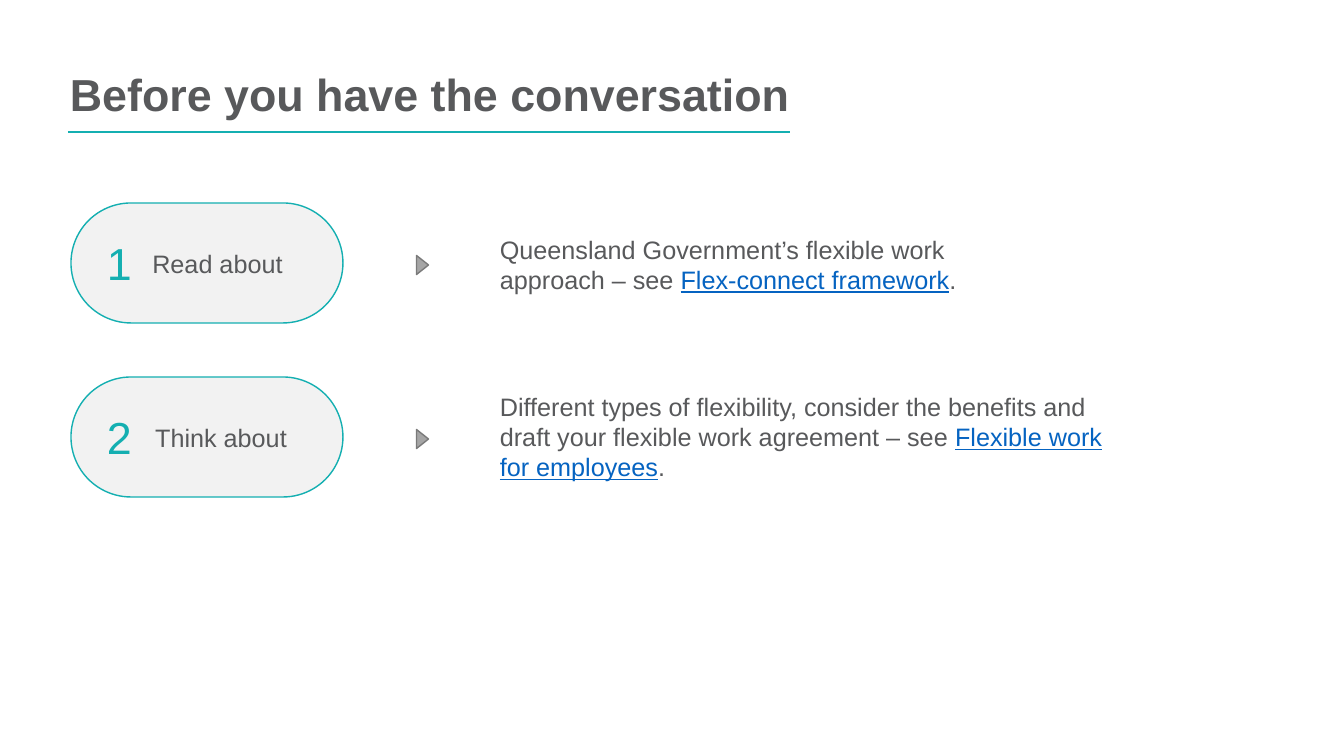
from pptx import Presentation
from pptx.dml.color import RGBColor
from pptx.enum.shapes import MSO_CONNECTOR, MSO_SHAPE
from pptx.enum.text import MSO_ANCHOR, PP_ALIGN
from pptx.oxml.ns import qn
from pptx.util import Emu, Pt
from lxml import etree

PILL, TRIANGLE = MSO_SHAPE.ROUNDED_RECTANGLE, MSO_SHAPE.ISOSCELES_TRIANGLE
STRAIGHT = MSO_CONNECTOR.STRAIGHT
MIDDLE, CENTER = MSO_ANCHOR.MIDDLE, PP_ALIGN.CENTER

GREY = RGBColor(0x58, 0x59, 0x5B)
TEAL = RGBColor(0x14, 0xAF, 0xB1)
BLUE = RGBColor(0x05, 0x63, 0xC1)
PALE = RGBColor(0xF2, 0xF2, 0xF2)
ARROW_FILL = RGBColor(0xA5, 0xA5, 0xA5)
ARROW_LINE = RGBColor(0x7A, 0x7A, 0x7A)


def px(*lengths):
    """Turn pixels, 100.8 to the inch, into EMU."""
    return [Emu(round(n * 914400 / 100.8)) for n in lengths]


def add_run(p, text, size, color=GREY):
    r = p.add_run()
    r.text = text
    r.font.name = "Arial"
    r.font.size = Pt(size)
    r.font.color.rgb = color
    return r


prs = Presentation()
prs.slide_width, prs.slide_height = px(1344, 756)
s = prs.slides.add_slide(prs.slide_layouts[6])

# Title and its underline
tf = s.shapes.add_textbox(*px(60, 60, 741, 74)).text_frame
tf.word_wrap = True
tf.vertical_anchor = MIDDLE
p = tf.paragraphs[0]
p.line_spacing = 0.9
add_run(p, "Before you have the conversation", 32).font.bold = True

rule = s.shapes.add_connector(STRAIGHT, *px(68, 132, 790, 132))
rule.line.color.rgb = TEAL
rule.line.width = Pt(1.5)
etree.SubElement(rule._element.spPr, qn("a:effectLst"))

# Steps: label, label's left inset, text box (left, top, width, height), text, link
steps = [
    ("Read about", 31, (490, 229, 556, 72),
     "Queensland Government’s flexible work approach – see ",
     "Flex-connect framework"),
    ("Think about", 38, (490, 386, 644, 102),
     "Different types of flexibility, consider the benefits and draft your "
     "flexible work agreement – see ",
     "Flexible work for employees"),
]
for i, (label, inset, box, text, link) in enumerate(steps):
    top = 203 + 174 * i

    pill = s.shapes.add_shape(PILL, *px(71, top, 272, 120))
    pill.adjustments[0] = 0.5
    arrow = s.shapes.add_shape(TRIANGLE, *px(413, top + 56, 19, 12))
    arrow.rotation = 90
    for sp, fill, line in ((pill, PALE, TEAL), (arrow, ARROW_FILL, ARROW_LINE)):
        sp.shadow.inherit = False
        sp.fill.solid()
        sp.fill.fore_color.rgb = fill
        sp.line.color.rgb = line
        sp.line.width = Pt(1)

    tf = pill.text_frame
    tf.word_wrap = True
    tf.vertical_anchor = MIDDLE
    tf.margin_left, = px(inset)
    p = tf.paragraphs[0]
    p.alignment = CENTER
    add_run(p, label, 18)

    tf = s.shapes.add_textbox(*px(97, top + 28, 40, 65)).text_frame
    tf.word_wrap = True
    add_run(tf.paragraphs[0], str(i + 1), 32, TEAL)

    tf = s.shapes.add_textbox(*px(*box)).text_frame
    tf.word_wrap = True
    p = tf.paragraphs[0]
    add_run(p, text, 18)
    add_run(p, link, 18, BLUE).font.underline = True
    add_run(p, ".", 18)

prs.save("out.pptx")
